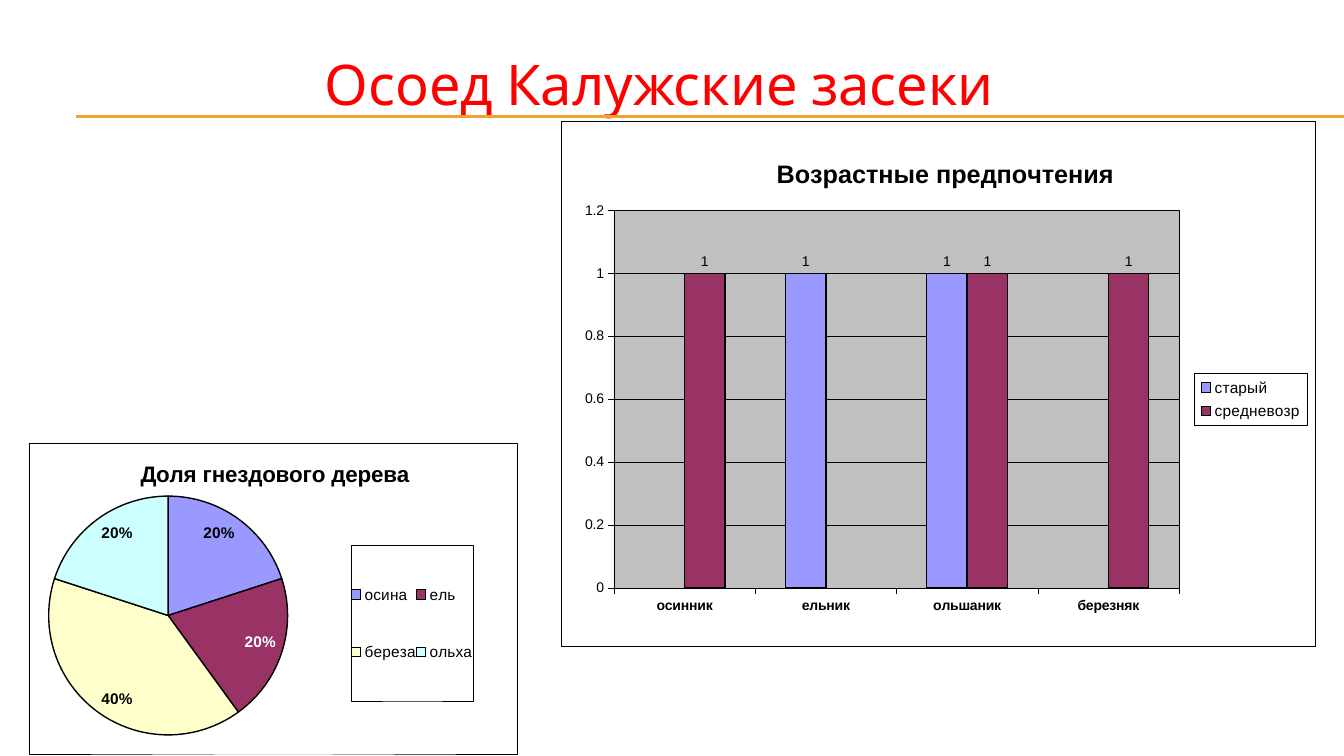
from dataclasses import dataclass

from lxml import etree
from pptx import Presentation
from pptx import util as u
from pptx.chart.data import CategoryChartData
from pptx.dml.color import RGBColor
from pptx.enum import chart as charts
from pptx.enum import shapes, text
from pptx.oxml import parse_xml
from pptx.oxml.ns import nsdecls, qn


@dataclass(frozen=True)
class Theme:
    """Colours, fonts and type sizes of the slide."""
    black: str = "000000"
    white: str = "FFFFFF"
    heading: str = "FF0000"
    rule: str = "F0A22E"
    plot: str = "C0C0C0"
    palette: tuple = ("9999FF", "993366", "FFFFCC", "CCFFFF")
    heading_font: str = "Karla"
    chart_font: str = "Arial"
    heading_size: int = 40
    column_title_size: int = 18
    pie_title_size: int = 16
    legend_size: int = 11
    label_size: int = 10
    hairline: float = 0.25


THEME = Theme()


def px(length):
    """Turn slide pixels into EMU."""
    return u.Emu(round(length * 914400 / 100.8))


def format_font(font, size, color=THEME.black, name=THEME.chart_font, bold=False):
    """Set size, colour, face and weight of a font."""
    font.size = u.Pt(size)
    font.name = name
    font.bold = bold
    font.color.rgb = RGBColor.from_string(color)


def write_text(frame, content, align=text.PP_ALIGN.CENTER, **style):
    """Write one formatted paragraph into a text frame."""
    paragraph = frame.paragraphs[0]
    paragraph.alignment = align
    run = paragraph.add_run()
    run.text = content
    format_font(run.font, **style)


def format_line(line, width, color=THEME.black):
    """Set colour and width of a line."""
    line.color.rgb = RGBColor.from_string(color)
    line.width = u.Pt(width)


def format_box(shape_format, fill, line_width):
    """Fill and outline a chart element."""
    shape_format.fill.solid()
    shape_format.fill.fore_color.rgb = RGBColor.from_string(fill)
    format_line(shape_format.line, line_width)


def add_rule(slide, y):
    """Draw a thin horizontal rule running to the right edge."""
    rule = slide.shapes.add_connector(
        shapes.MSO_CONNECTOR.STRAIGHT, px(76), px(y), px(1344), px(y))
    format_line(rule.line, 0.75, THEME.rule)
    etree.SubElement(rule.element.spPr, qn("a:effectLst"))


def add_title(slide, content, left, top, width, height):
    """Place the title placeholder and write the heading."""
    title = slide.shapes.title
    title.left, title.top, title.width, title.height = map(px, (left, top, width, height))
    title.text_frame.word_wrap = True
    title.text_frame.vertical_anchor = text.MSO_ANCHOR.MIDDLE
    write_text(title.text_frame, content, size=THEME.heading_size,
               color=THEME.heading, name=THEME.heading_font)


def box_properties(fill):
    """Build the filled, hairline-bordered properties of a chart area."""
    return parse_xml(
        f'<c:spPr {nsdecls("c", "a")}>'
        f'<a:solidFill><a:srgbClr val="{fill}"/></a:solidFill>'
        f'<a:ln w="{u.Pt(THEME.hairline)}"><a:solidFill>'
        f'<a:srgbClr val="{THEME.black}"/></a:solidFill></a:ln></c:spPr>')


def set_layout(element, after=None, inner=False, **fractions):
    """Give a chart part a manual place in fractions of the chart."""
    for former in element.findall(qn("c:layout")):
        element.remove(former)
    target = '<c:layoutTarget val="inner"/>' if inner else ""
    modes = "".join(f'<c:{key}Mode val="edge"/>' for key in "xy")
    places = "".join(f'<c:{key} val="{value}"/>' for key, value in fractions.items())
    layout = parse_xml(f'<c:layout {nsdecls("c")}><c:manualLayout>'
                       f'{target}{modes}{places}</c:manualLayout></c:layout>')
    if after:
        element.find(qn(after)).addnext(layout)
    else:
        element.insert(0, layout)


def add_chart(slide, kind, box, categories, series, title, title_size,
              title_place, plot_place, legend_place, legend_side):
    """Add a framed chart with a title, a plot and a boxed legend."""
    data = CategoryChartData()
    data.categories = categories
    for name, values in series.items():
        data.add_series(name, values)
    chart = slide.shapes.add_chart(kind, *map(px, box), data).chart
    format_font(chart.font, THEME.label_size)
    chart.has_title = True
    write_text(chart.chart_title.text_frame, title, size=title_size, bold=True)
    chart.chart_title.include_in_layout = False
    set_layout(chart.chart_title.element, "c:tx", **title_place)

    chart.has_legend = True
    chart.legend.position = legend_side
    chart.legend.include_in_layout = False
    chart_element = chart.element.find(qn("c:chart"))
    legend_element = chart_element.find(qn("c:legend"))
    set_layout(legend_element, "c:legendPos", **legend_place)
    legend_element.find(qn("c:overlay")).addnext(box_properties(THEME.white))
    format_font(chart.legend.font, THEME.legend_size)

    set_layout(chart_element.find(qn("c:plotArea")), inner=True, **plot_place)
    chart_element.addnext(box_properties(THEME.white))
    return chart


def style_columns(chart):
    """Format the columns, their labels, the axes and the plot wall."""
    plot = chart.plots[0]
    plot.gap_width = 150
    plot.overlap = 0
    plot.vary_by_categories = False
    for series, color in zip(plot.series, THEME.palette):
        format_box(series.format, color, 1)
        labels = series.data_labels
        labels.show_value = True
        labels.position = charts.XL_LABEL_POSITION.OUTSIDE_END
        format_font(labels.font, THEME.label_size)
    for axis, bold in ((chart.category_axis, True), (chart.value_axis, False)):
        axis.major_tick_mark = charts.XL_TICK_MARK.OUTSIDE
        axis.minor_tick_mark = charts.XL_TICK_MARK.NONE
        format_line(axis.format.line, THEME.hairline)
        format_font(axis.tick_labels.font, THEME.label_size, bold=bold)
    axis = chart.value_axis
    axis.minimum_scale, axis.maximum_scale, axis.major_unit = 0, 1.2, 0.2
    axis.has_major_gridlines = True
    format_line(axis.major_gridlines.format.line, THEME.hairline)
    chart.element.find(".//" + qn("c:plotArea")).append(box_properties(THEME.plot))


def style_pie(chart, light_label):
    """Format the slices and percentages, one of them in white."""
    plot = chart.plots[0]
    plot.vary_by_categories = True
    series = plot.series[0]
    format_line(series.format.line, 1)
    for index, color in enumerate(THEME.palette):
        format_box(series.points[index].format, color, 1)
    labels = series.data_labels
    labels.show_value = False
    labels.show_percentage = True
    labels.number_format = "0%"
    labels.number_format_is_linked = False
    labels.position = charts.XL_LABEL_POSITION.INSIDE_END
    format_font(labels.font, THEME.legend_size, bold=True)
    label = series.points[light_label].data_label
    format_font(label.font, THEME.legend_size, THEME.white, bold=True)
    label.position = charts.XL_LABEL_POSITION.INSIDE_END
    label_element = chart.element.find(".//" + qn("c:dLbl"))
    label_element.find(qn("c:showVal")).set("val", "0")
    label_element.find(qn("c:showPercent")).set("val", "1")


def main():
    """Build the slide and save it."""
    presentation = Presentation()
    presentation.slide_width, presentation.slide_height = px(1344), px(756)
    slide = presentation.slides.add_slide(presentation.slide_layouts[5])
    for y in (116, 117):
        add_rule(slide, y)
    add_title(slide, "Осоед Калужские засеки", 187, 44, 945, 78)
    style_columns(add_chart(
        slide, charts.XL_CHART_TYPE.COLUMN_CLUSTERED, (561, 121, 754, 525),
        ("осинник", "ельник", "ольшаник", "березняк"),
        {"старый": (None, 1, 1, None), "средневозр": (1, None, 1, 1)},
        "Возрастные предпочтения", THEME.column_title_size,
        dict(x=0.28, y=0.06), dict(x=0.07, y=0.17, w=0.75, h=0.72),
        dict(x=0.84, y=0.48, w=0.15, h=0.1), charts.XL_LEGEND_POSITION.RIGHT))
    style_pie(add_chart(
        slide, charts.XL_CHART_TYPE.PIE, (29, 443, 488, 311),
        ("осина", "ель", "береза", "ольха"), {"Series 1": (20, 20, 40, 20)},
        "Доля гнездового дерева", THEME.pie_title_size,
        dict(x=0.22, y=0.04), dict(x=0.04, y=0.17, w=0.49, h=0.77),
        dict(x=0.66, y=0.33, w=0.25, h=0.5), charts.XL_LEGEND_POSITION.LEFT), light_label=1)
    presentation.save("out.pptx")


if __name__ == "__main__":
    main()
